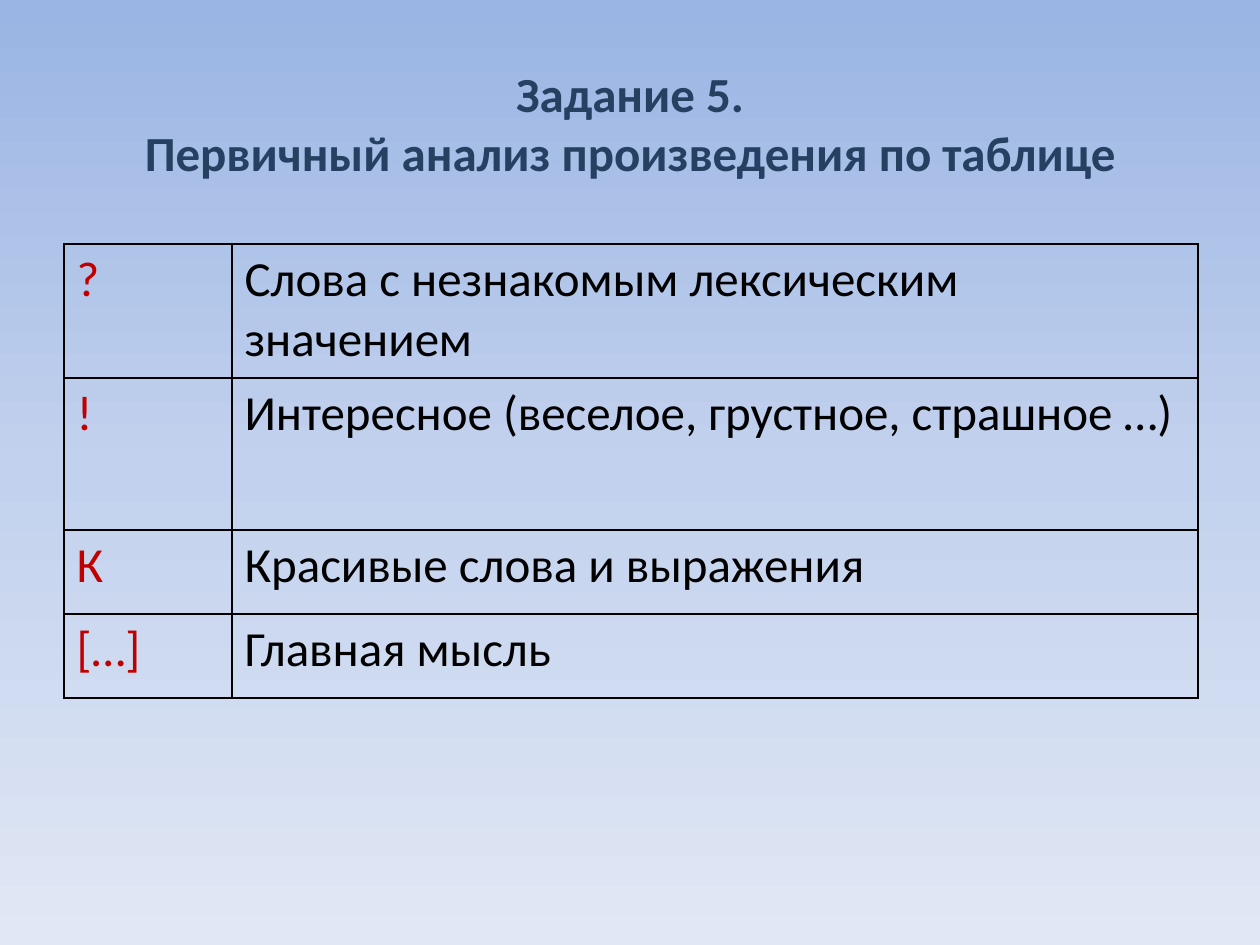
from copy import deepcopy
from dataclasses import dataclass

from lxml import etree
from pptx import Presentation
from pptx.dml.color import RGBColor
from pptx.enum.text import MSO_ANCHOR, PP_ALIGN
from pptx.oxml.ns import qn
from pptx.util import Pt

CENTER = PP_ALIGN.CENTER
LEFT = PP_ALIGN.LEFT
MIDDLE = MSO_ANCHOR.MIDDLE
EMU_PER_PX = 914400 / 126
FONT = "Calibri"
COLORS = {
    "title": "254061",
    "mark": "C00000",
    "text": "000000",
    "border": "000000",
    "sky_top": "9AB5E4",
    "sky_middle": "C2D1ED",
    "sky_bottom": "E1E8F5",
}
GRADIENT = [(0, "sky_top"), (0.5, "sky_middle"), (1, "sky_bottom")]
COLUMN_WIDTHS = [168, 966]


@dataclass
class MarkRow:
    mark: str
    meaning: str
    height: int


ROWS = [
    MarkRow("?", "Слова с незнакомым лексическим значением", 134),
    MarkRow("!", "Интересное (веселое, грустное, страшное …)", 152),
    MarkRow("К", "Красивые слова и выражения", 84),
    MarkRow("[…]", "Главная мысль", 84),
]


def px(length: int) -> int:
    return round(length * EMU_PER_PX)


def rgb(name: str) -> RGBColor:
    return RGBColor.from_string(COLORS[name])


def write_text(text_frame, text: str, *, color: str, size: int = 28,
               bold: bool = False, align=LEFT) -> None:
    text_frame.word_wrap = True
    paragraph = text_frame.paragraphs[0]
    paragraph.text = text
    paragraph.alignment = align
    for run in paragraph.runs:
        run.font.name = FONT
        run.font.size = Pt(size)
        run.font.bold = bold
        run.font.color.rgb = rgb(color)


def paint_background(slide) -> None:
    fill = slide.background.fill
    fill.gradient()
    fill.gradient_angle = 270
    stop_list = next(slide.element.iter(qn("a:gsLst")))
    stop_list.append(deepcopy(stop_list[-1]))
    for stop, (position, color) in zip(fill.gradient_stops, GRADIENT):
        stop.position = position
        stop.color.rgb = rgb(color)


def add_title(slide, text: str) -> None:
    shape = slide.shapes.add_textbox(px(63), px(38), px(1134), px(227))
    text_frame = shape.text_frame
    text_frame.vertical_anchor = MIDDLE
    text_frame.margin_bottom = px(65)
    write_text(text_frame, text, color="title", bold=True, align=CENTER)


def add_borders(cell) -> None:
    properties = cell._tc.get_or_add_tcPr()
    for index, side in enumerate(("a:lnL", "a:lnR", "a:lnT", "a:lnB")):
        line = etree.Element(qn(side), w=str(Pt(1)))
        fill = etree.SubElement(line, qn("a:solidFill"))
        etree.SubElement(fill, qn("a:srgbClr"), val=COLORS["border"])
        properties.insert(index, line)


def add_mark_table(slide, rows: list[MarkRow]) -> None:
    shape = slide.shapes.add_table(
        len(rows), len(COLUMN_WIDTHS), px(64), px(244),
        px(sum(COLUMN_WIDTHS)), px(sum(row.height for row in rows)))
    table = shape.table
    table.first_row = False
    table.horz_banding = False
    for column, width in zip(table.columns, COLUMN_WIDTHS):
        column.width = px(width)
    for index, row in enumerate(rows):
        table.rows[index].height = px(row.height)
        contents = ((row.mark, "mark"), (row.meaning, "text"))
        for column_index, (text, color) in enumerate(contents):
            cell = table.cell(index, column_index)
            cell.fill.background()
            add_borders(cell)
            write_text(cell.text_frame, text, color=color)


def main() -> None:
    presentation = Presentation()
    presentation.slide_width = px(1260)
    presentation.slide_height = px(945)
    slide = presentation.slides.add_slide(presentation.slide_layouts[6])
    paint_background(slide)
    add_title(slide, "Задание 5.\vПервичный анализ произведения по таблице")
    add_mark_table(slide, ROWS)
    presentation.save("out.pptx")


if __name__ == "__main__":
    main()
